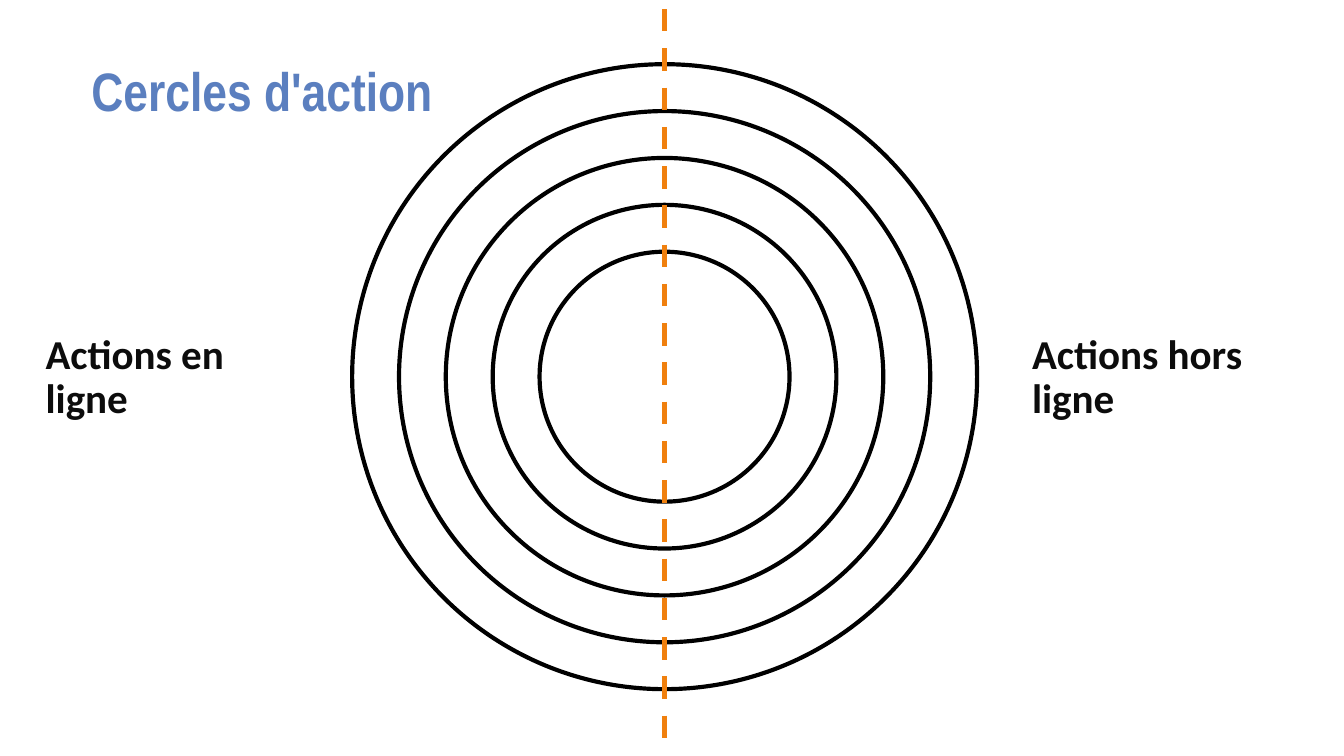
from dataclasses import dataclass

from lxml import etree
from pptx import Presentation
from pptx.dml.color import RGBColor
from pptx.enum.dml import MSO_LINE
from pptx.enum.shapes import MSO_CONNECTOR, MSO_SHAPE
from pptx.enum.text import MSO_ANCHOR, MSO_AUTO_SIZE, PP_ALIGN
from pptx.oxml.ns import qn
from pptx.util import Inches, Pt

OVAL = MSO_SHAPE.OVAL
STRAIGHT = MSO_CONNECTOR.STRAIGHT
DASH = MSO_LINE.DASH
MIDDLE = MSO_ANCHOR.MIDDLE
LEFT = PP_ALIGN.LEFT
FIXED = MSO_AUTO_SIZE.NONE

WIDE = Inches(10)
HIGH = WIDE * 9 // 16
RINGS = 5
CORE = 0.4  # innermost diameter as a share of the outermost


@dataclass(frozen=True)
class Theme:
    blue: RGBColor = RGBColor(0x5B, 0x7F, 0xBF)
    dark: RGBColor = RGBColor(0x0C, 0x0C, 0x0C)
    black: RGBColor = RGBColor(0, 0, 0)
    orange: RGBColor = RGBColor(0xF0, 0x80, 0x0E)
    head: str = "Arial Narrow"
    body: str = "Calibri"
    big: float = 29
    mid: float = 22
    thin: float = 2.25
    thick: float = 3


THEME = Theme()


def area(left, top, width, height):
    """Turn percentages of the slide's size into a box."""
    return (int(WIDE * left / 100), int(HIGH * top / 100),
            int(WIDE * width / 100), int(HIGH * height / 100))


def write(shape, text, face, size, color):
    """Fill a text shape with one bold, left-aligned run."""
    frame = shape.text_frame
    frame.word_wrap = True
    frame.auto_size = FIXED
    frame.vertical_anchor = MIDDLE
    frame.margin_left = frame.margin_right = Inches(0.07)
    frame.margin_top = frame.margin_bottom = Inches(0.04)
    para = frame.paragraphs[0]
    para.alignment = LEFT
    para.line_spacing = 0.9
    run = para.add_run()
    run.text = text
    run.font.name = face
    run.font.size = Pt(size)
    run.font.bold = True
    run.font.color.rgb = color


def add_title(slide, box, text):
    title = slide.shapes.title
    title.left, title.top, title.width, title.height = box
    write(title, text, THEME.head, THEME.big, THEME.blue)


def add_label(slide, box, text):
    label = slide.shapes.add_textbox(*box)
    write(label, text, THEME.body, THEME.mid, THEME.dark)


def add_rings(slide, box):
    """Draw concentric rings, the outermost as wide as the box."""
    left, top, size, _ = box
    step = size * (1 - CORE) / (RINGS - 1) / 2
    for i in range(RINGS):
        gap = int(i * step)
        side = size - 2 * gap
        ring = slide.shapes.add_shape(OVAL, left + gap, top + gap, side, side)
        ring.shadow.inherit = False
        ring.fill.background()
        ring.line.color.rgb = THEME.black
        ring.line.width = Pt(THEME.thin)


def add_split(slide, box):
    """Draw a dashed line down the middle of the box."""
    left, top, width, height = box
    x = left + width // 2
    split = slide.shapes.add_connector(STRAIGHT, x, top, x, top + height)
    split.line.color.rgb = THEME.orange
    split.line.width = Pt(THEME.thick)
    split.line.dash_style = DASH
    etree.SubElement(split._element.spPr, qn("a:effectLst"))


def main():
    deck = Presentation()
    deck.slide_width, deck.slide_height = WIDE, HIGH
    slide = deck.slides.add_slide(deck.slide_layouts.get_by_name("Title Only"))

    # Title
    add_title(slide, area(6.1, 6.5, 87.7, 11.9), "Cercles d'action")

    # Rings, split into two halves
    add_rings(slide, area(26.2, 8.5, 46.5, 82.7))
    add_split(slide, area(26.2, 1.2, 46.5, 97.3))

    # One label on each side
    for left, text in ((2.7, "Actions en ligne"), (76.1, "Actions hors ligne")):
        add_label(slide, area(left, 40.5, 20, 19), text)

    deck.save("out.pptx")


if __name__ == "__main__":
    main()
